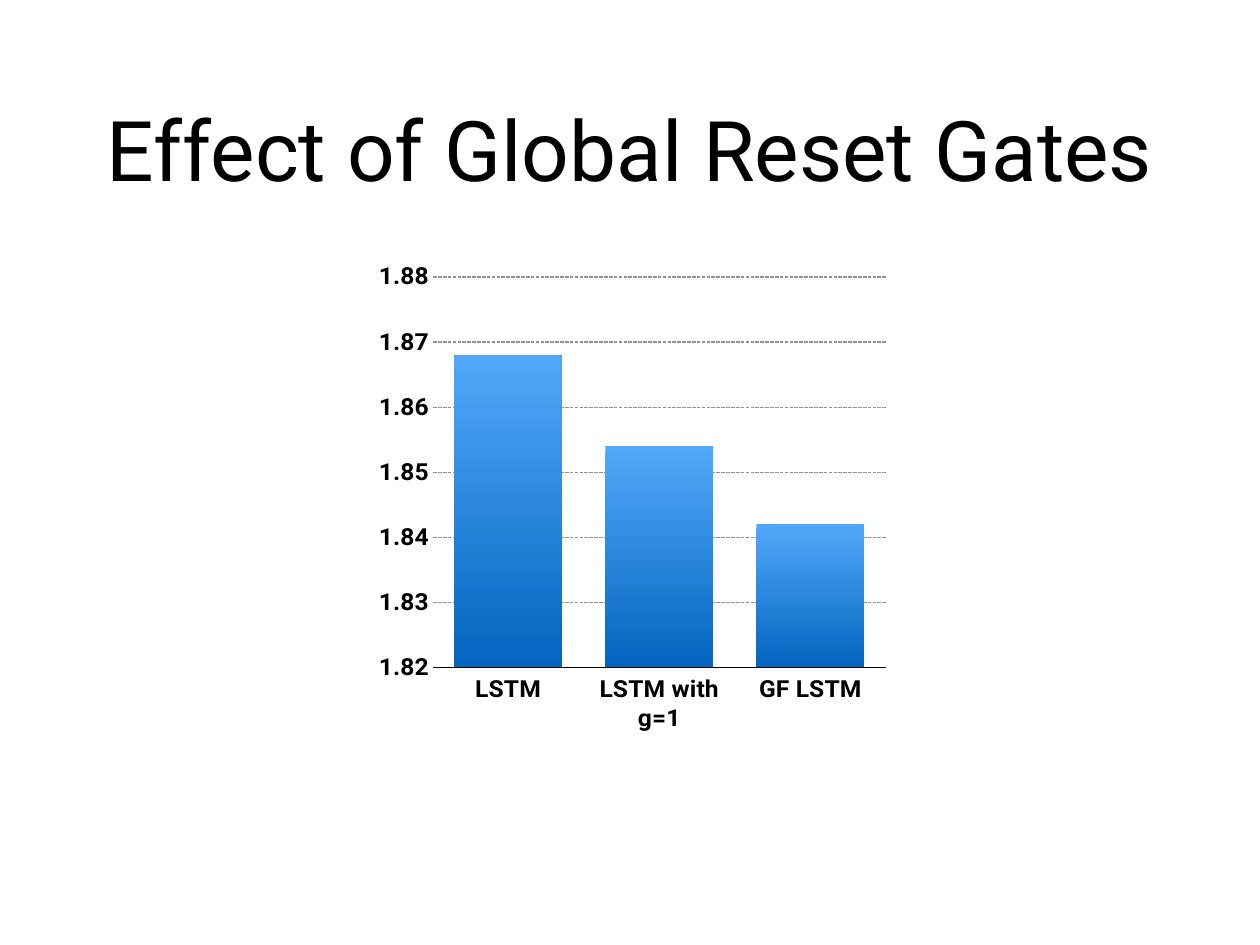
from dataclasses import dataclass

from lxml import etree
from pptx import Presentation
from pptx.chart.data import CategoryChartData
from pptx.dml.color import RGBColor
from pptx.enum.chart import XL_CHART_TYPE, XL_TICK_LABEL_POSITION, XL_TICK_MARK
from pptx.enum.dml import MSO_LINE
from pptx.enum.text import MSO_ANCHOR, PP_ALIGN
from pptx.oxml.ns import qn
from pptx.util import Inches, Pt

COLUMN_CLUSTERED = XL_CHART_TYPE.COLUMN_CLUSTERED
LABELS_LOW = XL_TICK_LABEL_POSITION.LOW
NO_TICKS = XL_TICK_MARK.NONE
GRID_DASH = MSO_LINE.SQUARE_DOT
MIDDLE = MSO_ANCHOR.MIDDLE
CENTER = PP_ALIGN.CENTER
TITLE_ONLY_LAYOUT = 5


@dataclass(frozen=True)
class Theme:
    font: str = "Roboto"
    title_size: int = 68
    label_size: int = 20
    background: str = "FFFFFF"
    text: str = "000000"
    grid: str = "929292"
    bar_top: str = "51A8F9"
    bar_bottom: str = "0365C0"


class SlideBuilder:
    def __init__(self, slide, theme):
        self.slide = slide
        self.theme = theme
        fill = slide.background.fill
        fill.solid()
        fill.fore_color.rgb = RGBColor.from_string(theme.background)

    def style_font(self, font, size, bold=False):
        font.name = self.theme.font
        font.size = Pt(size)
        font.bold = bold
        font.color.rgb = RGBColor.from_string(self.theme.text)

    def style_line(self, line, color):
        line.color.rgb = RGBColor.from_string(color)
        line.width = Pt(1)

    def title(self, text, left, top, width, height):
        shape = self.slide.shapes.title
        shape.left, shape.top = Inches(left), Inches(top)
        shape.width, shape.height = Inches(width), Inches(height)
        frame = shape.text_frame
        frame.text = text
        frame.word_wrap = True
        frame.vertical_anchor = MIDDLE
        frame.margin_left = frame.margin_right = Inches(0.06)
        frame.margin_top = frame.margin_bottom = Inches(0.06)
        paragraph = frame.paragraphs[0]
        paragraph.alignment = CENTER
        self.style_font(paragraph.runs[0].font, self.theme.title_size)

    def column_chart(self, data, left, top, width, height, scale, plot_area):
        chart = self.slide.shapes.add_chart(
            COLUMN_CLUSTERED, Inches(left), Inches(top),
            Inches(width), Inches(height), data).chart
        chart.has_legend = False
        chart.has_title = False
        self.style_font(chart.font, 10)

        # Axes and grid
        for axis in (chart.category_axis, chart.value_axis):
            axis.major_tick_mark = axis.minor_tick_mark = NO_TICKS
            self.style_font(axis.tick_labels.font, self.theme.label_size, bold=True)
        chart.category_axis.tick_label_position = LABELS_LOW
        self.style_line(chart.category_axis.format.line, self.theme.text)
        value_axis = chart.value_axis
        value_axis.minimum_scale, value_axis.maximum_scale, value_axis.major_unit = scale
        value_axis.format.line.fill.background()
        grid_line = value_axis.major_gridlines.format.line
        self.style_line(grid_line, self.theme.grid)
        grid_line.dash_style = GRID_DASH

        # Columns, light at the top
        plot = chart.plots[0]
        plot.gap_width, plot.overlap = 40, -10
        plot.vary_by_categories = False
        fill = plot.series[0].format.fill
        fill.gradient()
        fill.gradient_angle = 270
        colors = (self.theme.bar_top, self.theme.bar_bottom)
        for stop, color in zip(fill.gradient_stops, colors):
            stop.color.rgb = RGBColor.from_string(color)

        self.place_plot(chart, plot_area)

    def place_plot(self, chart, plot_area):
        area = chart.plots[0]._element.getparent()
        for old_layout in area.findall(qn("c:layout")):
            area.remove(old_layout)
        layout = etree.Element(qn("c:layout"))
        area.insert(0, layout)
        manual = etree.SubElement(layout, qn("c:manualLayout"))
        settings = [("layoutTarget", "inner"), ("xMode", "edge"), ("yMode", "edge")]
        settings += zip("xywh", plot_area)
        for name, value in settings:
            etree.SubElement(manual, qn(f"c:{name}")).set("val", str(value))


def main():
    presentation = Presentation()
    presentation.slide_width = Inches(14.22)
    presentation.slide_height = Inches(10.67)
    slide = presentation.slides.add_slide(presentation.slide_layouts[TITLE_ONLY_LAYOUT])
    builder = SlideBuilder(slide, Theme())

    # Title
    builder.title("Effect of Global Reset Gates", 1.04, 0.49, 12.14, 2.36)

    # Comparison of the three models
    data = CategoryChartData(number_format="General")
    data.categories = ["LSTM", "LSTM with g=1", "GF LSTM"]
    data.add_series("Series 1", (1.868, 1.854, 1.842))
    builder.column_chart(data, 4.12, 2.81, 5.91, 5.46,
                         scale=(1.82, 1.88, 0.01),
                         plot_area=(0.129, 0.061, 0.866, 0.844))

    presentation.save("out.pptx")


if __name__ == "__main__":
    main()
